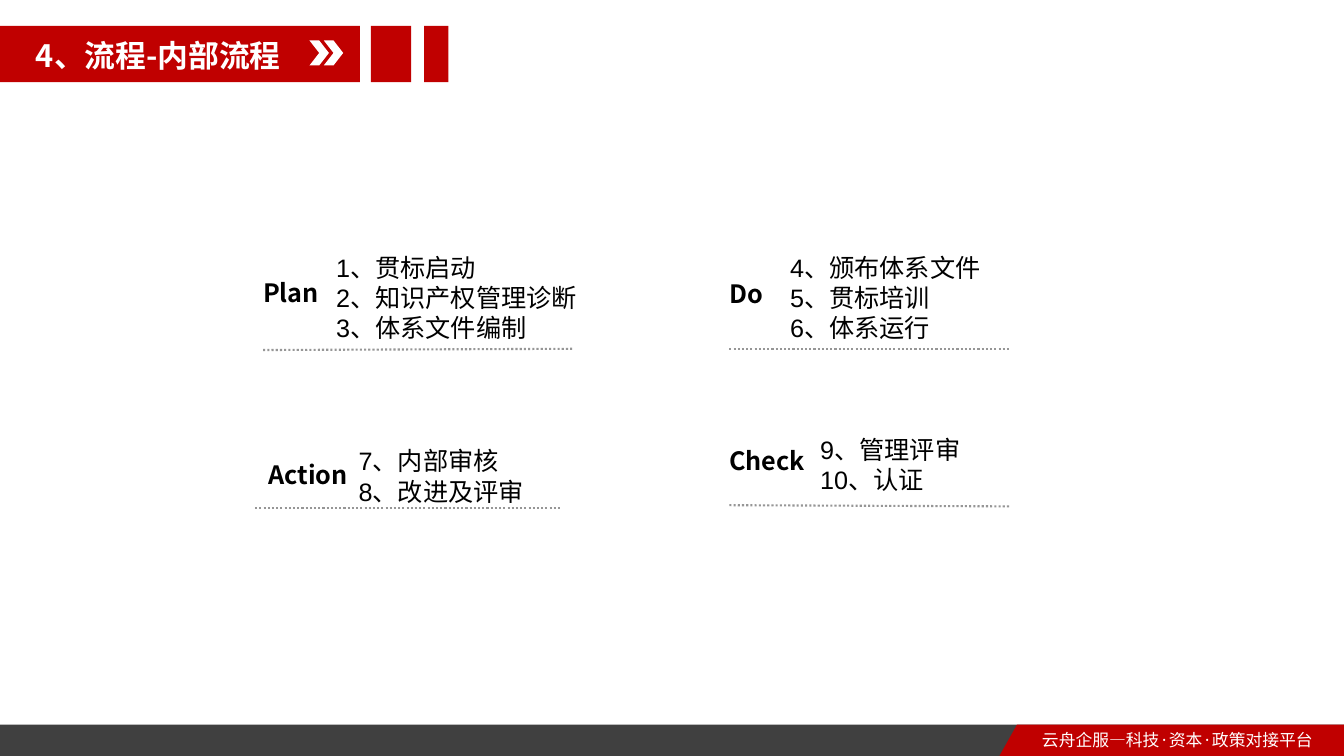
from dataclasses import dataclass

from lxml.etree import SubElement
from pptx import Presentation
from pptx.dml.color import RGBColor
from pptx.enum.dml import MSO_LINE
from pptx.enum.shapes import MSO_CONNECTOR, MSO_SHAPE
from pptx.enum.text import MSO_ANCHOR, MSO_AUTO_SIZE, PP_ALIGN
from pptx.oxml.ns import qn
from pptx.shapes.base import BaseShape
from pptx.slide import Slide
from pptx.util import Cm, Pt

COLOURS = {
    "red": "C00000",
    "white": "FFFFFF",
    "charcoal": "404040",
    "grey": "969696",
    "black": "000000",
}
HEADING_FONT = "Noto Sans CJK SC"
FOOTER_FONT = "Noto Sans CJK JP"
LIST_FONT = "Arial"
COMPARISON_LAYOUT = 4
DEFAULT_MARGINS = (0.25, 0.13, 0.25, 0.13)

Box = tuple[float, float, float, float]


@dataclass(frozen=True)
class Block:
    shape_type: MSO_SHAPE
    box: Box
    colour: str


@dataclass(frozen=True)
class TextStyle:
    font: str
    size: float
    colour: str = "black"
    bold: bool = False
    alignment: PP_ALIGN = PP_ALIGN.LEFT
    anchor: MSO_ANCHOR = MSO_ANCHOR.TOP
    margins: Box = DEFAULT_MARGINS


@dataclass(frozen=True)
class Stage:
    label: str
    label_box: Box
    label_style: TextStyle
    steps: list[str]
    steps_box: Box
    rule: Box


def label_style(alignment: PP_ALIGN, anchor: MSO_ANCHOR, margins: Box) -> TextStyle:
    return TextStyle(HEADING_FONT, 18, "black", True, alignment, anchor, margins)


UPPER_LABEL = label_style(PP_ALIGN.LEFT, MSO_ANCHOR.BOTTOM, (0, 0, 0, 0.25))
ACTION_LABEL = label_style(PP_ALIGN.CENTER, MSO_ANCHOR.TOP, (0, 0.25, 0, 0))
CHECK_LABEL = label_style(PP_ALIGN.LEFT, MSO_ANCHOR.MIDDLE, (0, 0.25, 0, 0))
TITLE_STYLE = TextStyle(HEADING_FONT, 22, "white", True, PP_ALIGN.CENTER,
                        margins=(0, 0.13, 0, 0))
STEPS_STYLE = TextStyle(LIST_FONT, 18)
FOOTER_STYLE = TextStyle(FOOTER_FONT, 12, "white")

BLOCKS = [
    Block(MSO_SHAPE.RECTANGLE, (0, 0.65, 9.07, 1.42), "red"),
    Block(MSO_SHAPE.RECTANGLE, (9.35, 0.65, 1.01, 1.42), "red"),
    Block(MSO_SHAPE.RECTANGLE, (10.69, 0.65, 0.61, 1.42), "red"),
    Block(MSO_SHAPE.CHEVRON, (7.8, 1.02, 0.49, 0.63), "white"),
    Block(MSO_SHAPE.CHEVRON, (8.16, 1.02, 0.49, 0.63), "white"),
    Block(MSO_SHAPE.RECTANGLE, (0, 18.26, 33.87, 0.83), "charcoal"),
]
FOOTER_OUTLINE = [(25.63, 18.26), (33.9, 18.26), (33.9, 19.08), (25.17, 19.08)]

STAGES = [
    Stage("Plan", (6.63, 6.99, 5.82, 1.02), UPPER_LABEL,
          ["1、贯标启动", "2、知识产权管理诊断", "3、体系文件编制"],
          (8.22, 6.22, 8, 2.57), (6.63, 8.82, 14.43, 8.79)),
    Stage("Do", (18.38, 7.01, 7.06, 1.02), UPPER_LABEL,
          ["4、颁布体系文件", "5、贯标培训", "6、体系运行"],
          (19.66, 6.22, 5.82, 2.57), (18.38, 8.79, 25.46, 8.79)),
    Stage("Action", (6.43, 11.33, 2.67, 1.02), ACTION_LABEL,
          ["7、内部审核", "8、改进及评审"],
          (8.79, 11.1, 5.18, 1.8), (6.43, 12.8, 14.1, 12.8)),
    Stage("Check", (18.38, 10.97, 5.05, 1.02), CHECK_LABEL,
          ["9、管理评审", "10、认证"],
          (20.42, 10.82, 4.32, 1.8), (18.38, 12.73, 25.46, 12.76)),
]


def colour(name: str) -> RGBColor:
    return RGBColor.from_string(COLOURS[name])


def place(shape: BaseShape, box: Box) -> None:
    for name, length in zip(("left", "top", "width", "height"), box):
        setattr(shape, name, Cm(length))


def paint(shape: BaseShape, colour_name: str) -> None:
    shape.shadow.inherit = False
    shape.fill.solid()
    shape.fill.fore_color.rgb = colour(colour_name)
    shape.line.fill.background()


def write(shape: BaseShape, lines: list[str], style: TextStyle) -> None:
    """Fill a text box or placeholder with unbulleted paragraphs."""
    frame = shape.text_frame
    left, top, right, bottom = (Cm(margin) for margin in style.margins)
    frame_format = {
        "text": "\n".join(lines), "word_wrap": True,
        "auto_size": MSO_AUTO_SIZE.NONE, "vertical_anchor": style.anchor,
        "margin_left": left, "margin_top": top,
        "margin_right": right, "margin_bottom": bottom,
    }
    for name, value in frame_format.items():
        setattr(frame, name, value)
    font_format = {"name": style.font, "size": Pt(style.size), "bold": style.bold}
    for paragraph in frame.paragraphs:
        paragraph.alignment = style.alignment
        paragraph.space_before = Pt(0)
        properties = paragraph._p.get_or_add_pPr()
        properties.set("marL", "0")
        properties.set("indent", "0")
        SubElement(properties, qn("a:buNone"))
        for run in paragraph.runs:
            for name, value in font_format.items():
                setattr(run.font, name, value)
            run.font.color.rgb = colour(style.colour)
            east_asian = SubElement(run._r.get_or_add_rPr(), qn("a:ea"))
            east_asian.set("typeface", style.font)


def add_text(slide: Slide, box: Box, text: str, style: TextStyle) -> None:
    text_box = slide.shapes.add_textbox(*(Cm(length) for length in box))
    write(text_box, [text], style)


def fill_placeholder(shape: BaseShape, box: Box, lines: list[str], style: TextStyle) -> None:
    """Format a placeholder and bring it in front of the drawn shapes."""
    place(shape, box)
    write(shape, lines, style)
    shape.element.getparent().append(shape.element)


def add_dotted_rule(slide: Slide, ends: Box) -> None:
    rule = slide.shapes.add_connector(
        MSO_CONNECTOR.STRAIGHT, *(Cm(length) for length in ends))
    rule.line.color.rgb = colour("grey")
    rule.line.width = Pt(1.5)
    rule.line.dash_style = MSO_LINE.ROUND_DOT
    SubElement(rule.element.spPr, qn("a:effectLst"))


def add_footer_tab(slide: Slide) -> None:
    start, *corners = [(Cm(x), Cm(y)) for x, y in FOOTER_OUTLINE]
    builder = slide.shapes.build_freeform(*start)
    builder.add_line_segments(corners, close=True)
    paint(builder.convert_to_shape(), "red")
    add_text(slide, (26.01, 18.26, 7.82, 0.76), "云舟企服—科技·资本·政策对接平台", FOOTER_STYLE)


def main() -> None:
    presentation = Presentation()
    presentation.slide_width = Cm(33.87)
    presentation.slide_height = Cm(19.05)
    slide = presentation.slides.add_slide(
        presentation.slide_layouts[COMPARISON_LAYOUT])
    title, *bodies = slide.placeholders

    for block in BLOCKS:
        shape = slide.shapes.add_shape(block.shape_type, 0, 0, 0, 0)
        place(shape, block.box)
        paint(shape, block.colour)
    add_footer_tab(slide)
    for stage, body in zip(STAGES, bodies):
        add_dotted_rule(slide, stage.rule)
        add_text(slide, stage.label_box, stage.label, stage.label_style)
        fill_placeholder(body, stage.steps_box, stage.steps, STEPS_STYLE)
    fill_placeholder(title, (0.08, 0.79, 7.82, 1.27), ["4、流程-内部流程"], TITLE_STYLE)
    presentation.save("out.pptx")


if __name__ == "__main__":
    main()
